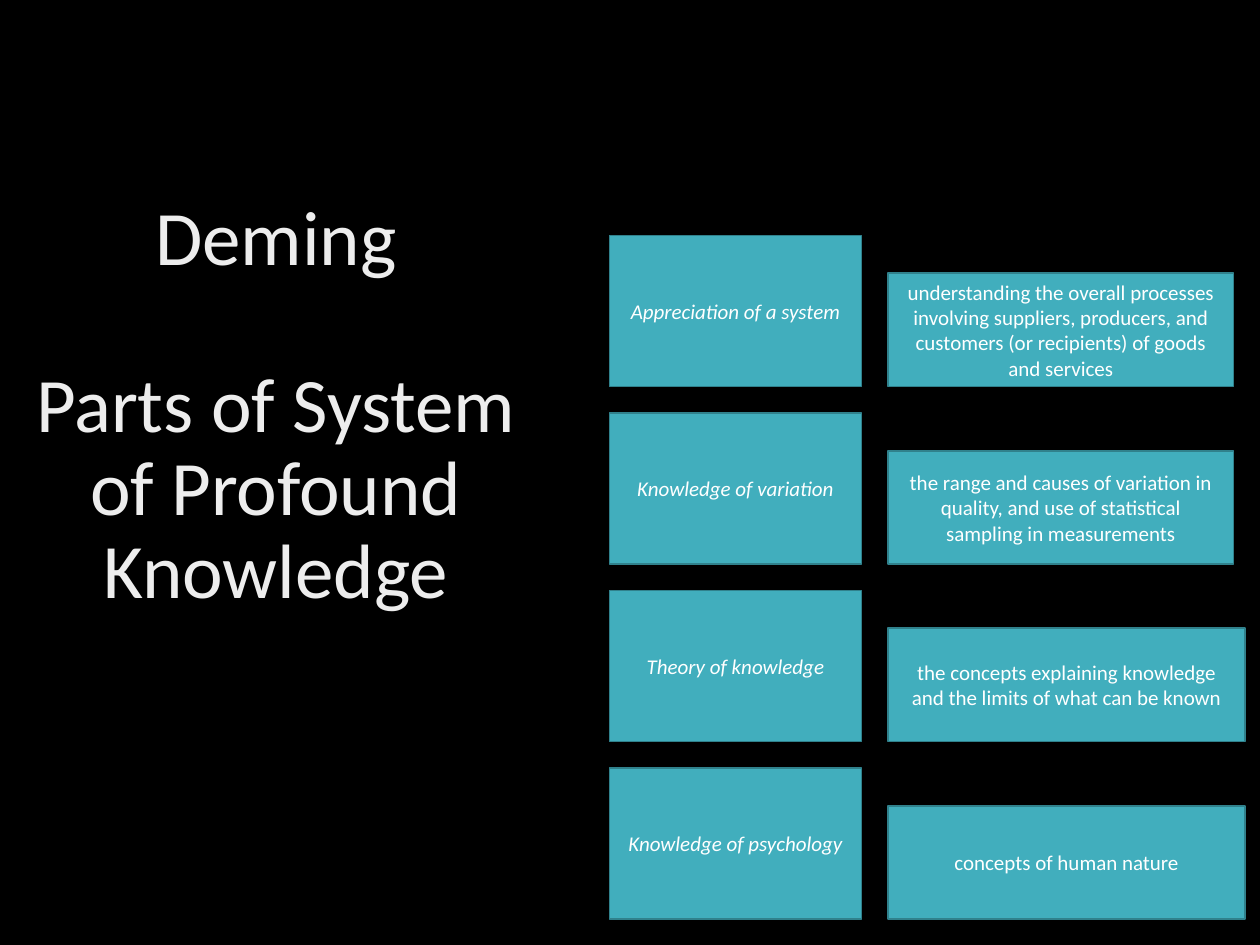
from pptx import Presentation
from pptx.dml.color import RGBColor
from pptx.enum.shapes import MSO_SHAPE
from pptx.enum.text import MSO_ANCHOR, PP_ALIGN
from pptx.util import Pt

COLORS = {"background": "000000", "title": "EDEDED", "box": "41AEBD",
          "outline": "30818C", "label": "FFFFFF"}
TITLE_FONT = {"name": "Calibri", "size": Pt(44)}
DETAIL_FONT = {"name": "Calibri", "size": Pt(12), "italic": False}
PART_FONT = {**DETAIL_FONT, "italic": True}

HEADING = ["Deming", "Parts of System of Profound Knowledge"]
PARTS = [
    ("Appreciation of a system",
     "understanding the overall processes involving suppliers, producers, "
     "and customers (or recipients) of goods and services", 197.3),
    ("Knowledge of variation",
     "the range and causes of variation in quality, and use of statistical "
     "sampling in measurements", 197.3),
    ("Theory of knowledge",
     "the concepts explaining knowledge and the limits of what can be known", 203.8),
    ("Knowledge of psychology", "concepts of human nature", 203.8),
]


def color(name):
    return RGBColor.from_string(COLORS[name])


def style_font(font, formats, color_name):
    for attribute, value in formats.items():
        setattr(font, attribute, value)
    font.color.rgb = color(color_name)


def add_heading(slide, left, top, width, height):
    heading = slide.shapes.add_textbox(Pt(left), Pt(top), Pt(width), Pt(height))
    frame = heading.text_frame
    frame.word_wrap = True
    frame.vertical_anchor = MSO_ANCHOR.MIDDLE
    frame.text = "\n".join(HEADING)
    for line in frame.paragraphs:
        line.alignment = PP_ALIGN.CENTER
        line.line_spacing = 0.9
        style_font(line.font, TITLE_FONT, "title")
    frame.paragraphs[-1].space_before = Pt(48)


def add_box(slide, text, formats, left, top, width, height):
    box = slide.shapes.add_shape(
        MSO_SHAPE.RECTANGLE, Pt(left), Pt(top), Pt(width), Pt(height))
    box.shadow.inherit = False
    box.fill.solid()
    box.fill.fore_color.rgb = color("box")
    box.line.color.rgb = color("outline")
    box.line.width = Pt(1)
    frame = box.text_frame
    frame.word_wrap = True
    frame.vertical_anchor = MSO_ANCHOR.MIDDLE
    frame.text = text
    label = frame.paragraphs[0]
    label.alignment = PP_ALIGN.CENTER
    style_font(label.font, formats, "label")


def add_parts(slide, left, top, height):
    part_width, part_height, detail_height, gutter = 144, 86.4, 64.8, 15.3
    pitch = (height - part_height) / (len(PARTS) - 1)
    for row, (part, detail, detail_width) in enumerate(PARTS):
        part_top = top + row * pitch
        add_box(slide, part, PART_FONT, left, part_top, part_width, part_height)
        add_box(slide, detail, DETAIL_FONT, left + part_width + gutter,
                part_top + part_height - detail_height, detail_width, detail_height)


def main():
    presentation = Presentation()
    presentation.slide_width, presentation.slide_height = Pt(720), Pt(540)
    slide = presentation.slides.add_slide(presentation.slide_layouts[6])
    slide.background.fill.solid()
    slide.background.fill.fore_color.rgb = color("background")
    add_heading(slide, 10.8, 18.7, 293.8, 427.7)
    add_parts(slide, 348.3, 134.6, 390.6)
    presentation.save("out.pptx")


if __name__ == "__main__":
    main()
